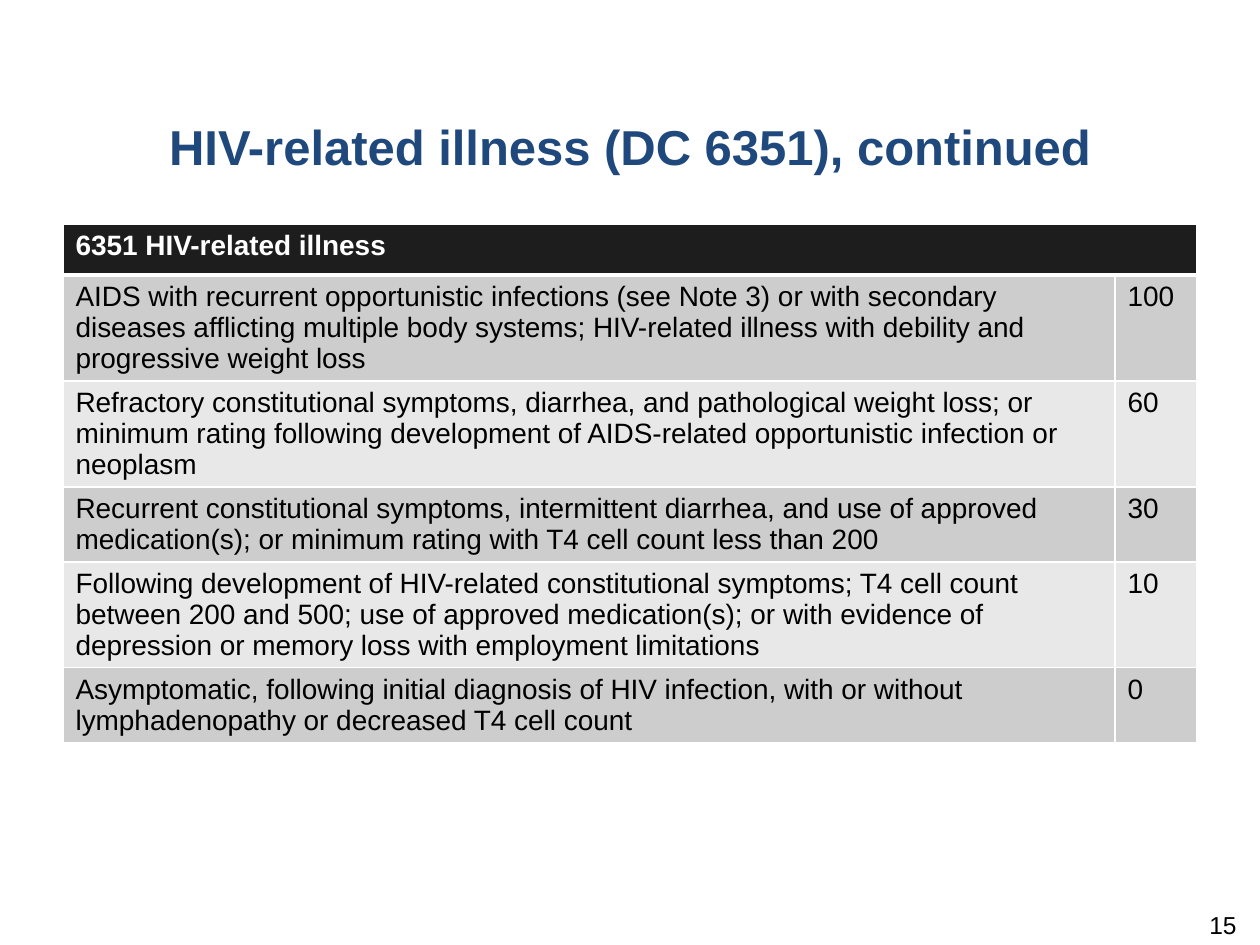
import pptx
import pptx.dml.color
import pptx.enum.text
import pptx.oxml.ns
import pptx.util
from lxml import etree

COLORS = {
    "title": "1F497D",
    "header": "1D1D1D",
    "dark_band": "CDCDCD",
    "light_band": "E8E8E8",
    "white": "FFFFFF",
    "black": "000000",
}

RATINGS = [
    ("AIDS with recurrent opportunistic infections (see Note 3) or with secondary diseases "
     "afflicting multiple body systems; HIV-related illness with debility and progressive "
     "weight loss", "100"),
    ("Refractory constitutional symptoms, diarrhea, and pathological weight loss; or minimum "
     "rating following development of AIDS-related opportunistic infection or neoplasm", "60"),
    ("Recurrent constitutional symptoms, intermittent diarrhea, and use of approved "
     "medication(s); or minimum rating with T4 cell count less than 200", "30"),
    ("Following development of HIV-related constitutional symptoms; T4 cell count between 200 "
     "and 500; use of approved medication(s); or with evidence of depression or memory loss "
     "with employment limitations", "10"),
    ("Asymptomatic, following initial diagnosis of HIV infection, with or without "
     "lymphadenopathy or decreased T4 cell count", "0"),
]


def px(length):
    return pptx.util.Emu(round(length * 914400 / 126))


def rgb(name):
    return pptx.dml.color.RGBColor.from_string(COLORS[name])


class RatingSlide:
    font = "Arial"

    def __init__(self, deck):
        self.slide = deck.slides.add_slide(deck.slide_layouts[5])

    def style(self, frame, size, color, bold=False, align=None):
        for paragraph in frame.paragraphs:
            paragraph.alignment = align
            for run in paragraph.runs:
                run.font.name = self.font
                run.font.size = pptx.util.Pt(size)
                run.font.bold = bold
                run.font.color.rgb = rgb(color)

    def title(self, text, left, top, width, height):
        heading = self.slide.shapes.title
        heading.left, heading.top = px(left), px(top)
        heading.width, heading.height = px(width), px(height)
        frame = heading.text_frame
        frame.text = text
        frame.vertical_anchor = pptx.enum.text.MSO_ANCHOR.TOP
        self.style(frame, 28, "title", True, pptx.enum.text.PP_ALIGN.CENTER)

    def page_number(self, text, left, top, width, height):
        frame = self.slide.shapes.add_textbox(
            px(left), px(top), px(width), px(height)).text_frame
        frame.word_wrap = True
        frame.margin_top = 0
        frame.text = text
        self.style(frame, 14, "black", align=pptx.enum.text.PP_ALIGN.RIGHT)

    def borders(self, cell, bottom):
        properties = cell._tc.get_or_add_tcPr()
        for side, points in (("L", 1), ("R", 1), ("T", 1), ("B", bottom)):
            line = etree.SubElement(properties, pptx.oxml.ns.qn(f"a:ln{side}"),
                                    w=str(pptx.util.Pt(points)))
            fill = etree.SubElement(line, pptx.oxml.ns.qn("a:solidFill"))
            etree.SubElement(fill, pptx.oxml.ns.qn("a:srgbClr"), val=COLORS["white"])

    def cell(self, cell, text, fill, color, bold=False, bottom=1):
        self.borders(cell, bottom)
        cell.fill.solid()
        cell.fill.fore_color.rgb = rgb(fill)
        cell.text = text
        self.style(cell.text_frame, 16, color, bold)

    def rating_table(self, heading, ratings, left, top, widths, row_height):
        row_count = len(ratings) + 1
        table = self.slide.shapes.add_table(
            row_count, len(widths), px(left), px(top),
            px(sum(widths)), px(row_height * row_count)).table
        for column, width in zip(table.columns, widths):
            column.width = px(width)
        for row in table.rows:
            row.height = px(row_height)
        for column, text in enumerate((heading, "")):
            self.cell(table.cell(0, column), text, "header", "white", True, 3)
        table.cell(0, 0).merge(table.cell(0, 1))
        for row, rating in enumerate(ratings, 1):
            band = "dark_band" if row % 2 else "light_band"
            for column, text in enumerate(rating):
                self.cell(table.cell(row, column), text, band, "black")


def main():
    deck = pptx.Presentation()
    deck.slide_width, deck.slide_height = px(1260), px(945)
    page = RatingSlide(deck)
    page.title("HIV-related illness (DC 6351), continued", 0, 110, 1260, 150)
    page.rating_table("6351 HIV-related illness", RATINGS, 63, 224, (1052, 82), 51)
    page.page_number("15", 955, 910, 294, 50)
    deck.save("out.pptx")


if __name__ == "__main__":
    main()
